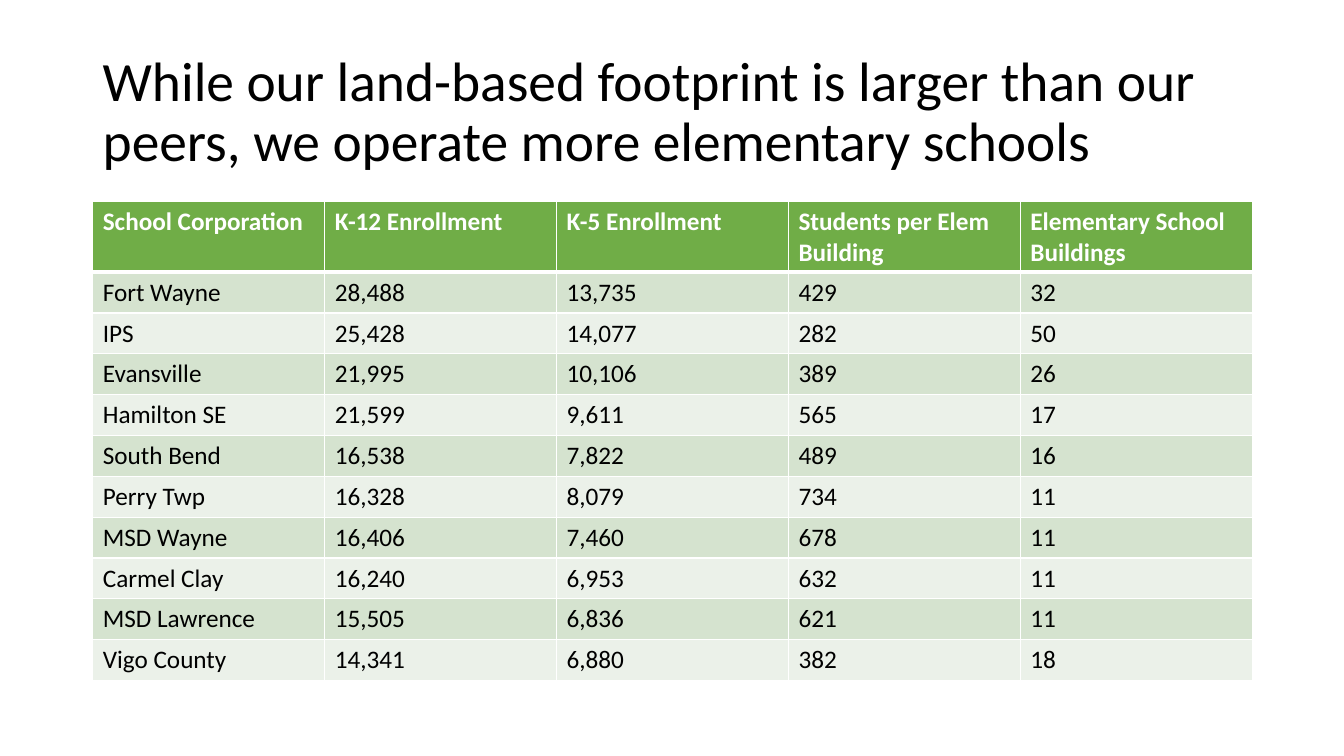
import pptx
import pptx.dml.color
import pptx.enum.text
import pptx.oxml.ns
import pptx.util
from lxml import etree

Inches = pptx.util.Inches
Pt = pptx.util.Pt

TITLE = ("While our land-based footprint is larger than our peers, "
         "we operate more elementary schools")
HEADERS = ["School Corporation", "K-12 Enrollment", "K-5 Enrollment",
           "Students per Elem Building", "Elementary School Buildings"]
SCHOOLS = [
    ["Fort Wayne", "28,488", "13,735", "429", "32"],
    ["IPS", "25,428", "14,077", "282", "50"],
    ["Evansville", "21,995", "10,106", "389", "26"],
    ["Hamilton SE", "21,599", "9,611", "565", "17"],
    ["South Bend", "16,538", "7,822", "489", "16"],
    ["Perry Twp", "16,328", "8,079", "734", "11"],
    ["MSD Wayne", "16,406", "7,460", "678", "11"],
    ["Carmel Clay", "16,240", "6,953", "632", "11"],
    ["MSD Lawrence", "15,505", "6,836", "621", "11"],
    ["Vigo County", "14,341", "6,880", "382", "18"],
]


def color(hex_string):
    return pptx.dml.color.RGBColor.from_string(hex_string)


class SlideBuilder:
    font = "Calibri"
    black = "000000"
    white = "FFFFFF"
    header_fill = "70AD47"
    band_fills = ["D5E3CF", "EBF1E9"]

    def __init__(self, presentation):
        self.slide = presentation.slides.add_slide(presentation.slide_layouts[6])

    def add_run(self, paragraph, text, size, hex_string, bold=False):
        run = paragraph.add_run()
        run.text = text
        run.font.name = self.font
        run.font.size = Pt(size)
        run.font.bold = bold
        run.font.color.rgb = color(hex_string)

    def title(self, text, left, top, width, height):
        shape = self.slide.shapes.add_textbox(
            Inches(left), Inches(top), Inches(width), Inches(height))
        frame = shape.text_frame
        frame.word_wrap = True
        frame.vertical_anchor = pptx.enum.text.MSO_ANCHOR.MIDDLE
        paragraph = frame.paragraphs[0]
        paragraph.line_spacing = 0.9
        self.add_run(paragraph, text, 39.6, self.black)

    def border(self, cell, side, width):
        qualified = pptx.oxml.ns.qn
        properties = cell._tc.get_or_add_tcPr()
        line = etree.SubElement(properties, qualified("a:ln" + side), w=str(Pt(width)))
        fill = etree.SubElement(line, qualified("a:solidFill"))
        etree.SubElement(fill, qualified("a:srgbClr"), val=self.white)

    def table(self, rows, left, top, width, height):
        table = self.slide.shapes.add_table(
            len(rows), len(rows[0]), Inches(left), Inches(top),
            Inches(width), Inches(height)).table
        for row_index, values in enumerate(rows):
            is_header = row_index == 0
            fill = self.header_fill if is_header else self.band_fills[(row_index - 1) % 2]
            text_color = self.white if is_header else self.black
            # The rule below the header is heavier than the rest
            widths = {"L": 1, "R": 1, "T": 3 if row_index == 1 else 1,
                      "B": 3 if is_header else 1}
            for column_index, text in enumerate(values):
                cell = table.cell(row_index, column_index)
                for side, line_width in widths.items():
                    self.border(cell, side, line_width)
                cell.fill.solid()
                cell.fill.fore_color.rgb = color(fill)
                self.add_run(cell.text_frame.paragraphs[0], text, 18,
                             text_color, is_header)


def main():
    presentation = pptx.Presentation()
    presentation.slide_width = Inches(13.33)
    presentation.slide_height = Inches(7.5)
    builder = SlideBuilder(presentation)

    # Headline
    builder.title(TITLE, 0.92, 0.4, 11.5, 1.45)

    # Enrollment table: equal rows, the header grows to fit two lines
    builder.table([HEADERS] + SCHOOLS, 0.92, 2, 11.5, 4.46)

    presentation.save("out.pptx")


if __name__ == "__main__":
    main()
